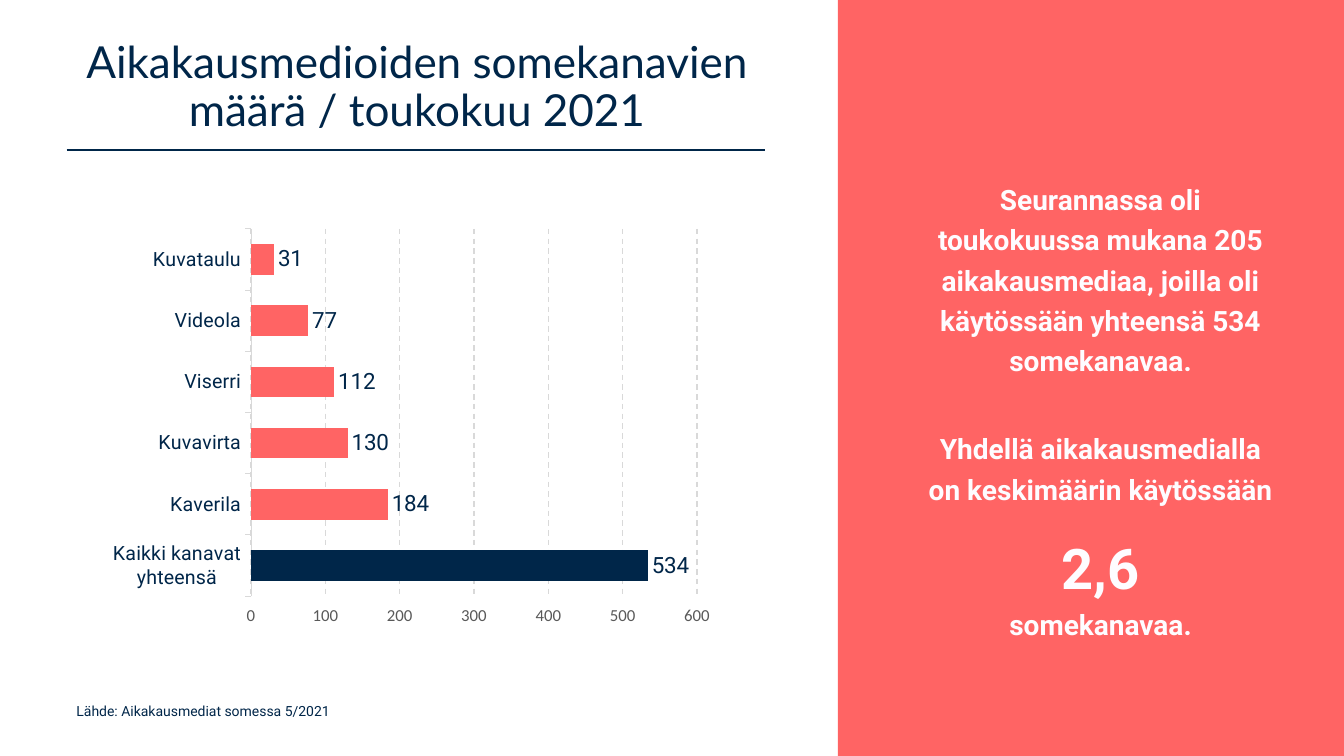
"""Builds a slide with a bar chart of social media channel counts and a summary panel."""
from lxml.etree import SubElement
from pptx import Presentation
from pptx.chart.data import CategoryChartData
from pptx.dml.color import RGBColor
from pptx.enum.chart import XL_CHART_TYPE, XL_LABEL_POSITION, XL_TICK_MARK
from pptx.enum.dml import MSO_LINE
from pptx.enum.shapes import MSO_CONNECTOR, MSO_SHAPE
from pptx.enum.text import MSO_ANCHOR, PP_ALIGN
from pptx.oxml.ns import qn
from pptx.util import Pt

NAVY = RGBColor(0x00, 0x26, 0x49)
CORAL = RGBColor(0xFF, 0x64, 0x64)
PALE = RGBColor(0xFE, 0xFC, 0xFF)
GRID = RGBColor(0xD9, 0xD9, 0xD9)
GREY = RGBColor(0x59, 0x59, 0x59)

TITLE = "Aikakausmedioiden somekanavien määrä / toukokuu 2021"
SOURCE = "Lähde: Aikakausmediat somessa 5/2021"
SUMMARY = [
    ("Seurannassa oli toukokuussa mukana 205 aikakausmediaa, joilla oli "
     "käytössään yhteensä 534 somekanavaa.", 20, 0),
    ("Yhdellä aikakausmedialla on keskimäärin käytössään", 20, 34),
    ("2,6", 40, 10),
    ("somekanavaa.", 20, 0),
]
CHANNELS = {
    "Kaikki kanavat yhteensä": 534,
    "Kaverila": 184,
    "Kuvavirta": 130,
    "Viserri": 112,
    "Videola": 77,
    "Kuvataulu": 31,
}
PLOT = {"x": 0.25, "y": 0.09, "w": 0.57, "h": 0.84}
PAGE_SIZE = (1333, 750)
PANEL = (831, 0, 502, 750)
RULE = (66, 149, 759, 149)
TITLE_BOX = (66, 25, 695, 125)
SOURCE_BOX = (66, 692, 658, 44)
SUMMARY_BOX = (904, 150, 375, 510)
CHART_BOX = (55, 188, 776, 434)
SCALE = 9144


def px(lengths):
    return [length * SCALE for length in lengths]


def style(font, name, size, color, bold=False):
    font.name, font.size, font.bold = name, Pt(size), bold
    font.color.rgb = color


def add_text(page, place, lines, name, color, align=PP_ALIGN.CENTER,
             anchor=MSO_ANCHOR.MIDDLE, spacing=1.0, bold=False):
    frame = page.shapes.add_textbox(*px(place)).text_frame
    frame.word_wrap = True
    frame.vertical_anchor = anchor
    for index, (text, size, before) in enumerate(lines):
        para = frame.add_paragraph() if index else frame.paragraphs[0]
        para.text = text
        para.alignment = align
        para.line_spacing = spacing
        para.space_before = Pt(before)
        style(para.font, name, size, color, bold)


def add_panel(page):
    panel = page.shapes.add_shape(MSO_SHAPE.RECTANGLE, *px(PANEL))
    panel.shadow.inherit = False
    panel.fill.solid()
    panel.fill.fore_color.rgb = CORAL
    panel.line.fill.background()


def add_rule(page):
    rule = page.shapes.add_connector(MSO_CONNECTOR.STRAIGHT, *px(RULE))
    rule.line.color.rgb = NAVY
    rule.line.width = Pt(1)
    SubElement(rule._element.spPr, qn("a:effectLst"))


def fix_plot_area(chart):
    area = chart._chartSpace.chart.plotArea
    layout = area.find(qn("c:layout"))
    if layout is None:
        layout = area.makeelement(qn("c:layout"))
        area.insert(0, layout)
    manual = SubElement(layout, qn("c:manualLayout"))
    settings = {"layoutTarget": "inner", "xMode": "edge", "yMode": "edge", **PLOT}
    for tag, value in settings.items():
        SubElement(manual, qn(f"c:{tag}")).set("val", str(value))


def add_bars(page):
    data = CategoryChartData(number_format="#,##0")
    data.categories = list(CHANNELS)
    data.add_series("Somekanavat", list(CHANNELS.values()))
    chart = page.shapes.add_chart(
        XL_CHART_TYPE.BAR_CLUSTERED, *px(CHART_BOX), data).chart
    chart.has_legend = False
    chart.has_title = False
    chart.font.name, chart.font.size = "Calibri", Pt(10)
    fix_plot_area(chart)

    names = chart.category_axis
    names.major_tick_mark = XL_TICK_MARK.OUTSIDE
    names.format.line.color.rgb = GRID
    names.format.line.width = Pt(0.75)
    style(names.tick_labels.font, "Roboto", 14, NAVY)

    counts = chart.value_axis
    counts.minimum_scale, counts.maximum_scale, counts.major_unit = 0, 600, 100
    counts.major_tick_mark = XL_TICK_MARK.OUTSIDE
    counts.format.line.fill.background()
    grid = counts.major_gridlines.format.line
    grid.color.rgb = GRID
    grid.width = Pt(1)
    grid.dash_style = MSO_LINE.DASH
    style(counts.tick_labels.font, "Calibri", 12, GREY)

    plot = chart.plots[0]
    plot.gap_width = 100
    plot.vary_by_categories = False
    bars = plot.series[0]
    bars.format.fill.solid()
    bars.format.fill.fore_color.rgb = CORAL
    total = bars.points[0].format.fill
    total.solid()
    total.fore_color.rgb = NAVY
    labels = bars.data_labels
    labels.show_value = True
    labels.position = XL_LABEL_POSITION.OUTSIDE_END
    labels.number_format = "#,##0"
    labels.number_format_is_linked = False
    style(labels.font, "Roboto", 16, NAVY)


def main():
    deck = Presentation()
    deck.slide_width, deck.slide_height = px(PAGE_SIZE)
    page = deck.slides.add_slide(deck.slide_layouts[6])
    add_panel(page)
    add_rule(page)
    add_text(page, SOURCE_BOX, [(SOURCE, 10, 0)], "Roboto", NAVY,
             align=PP_ALIGN.LEFT, anchor=MSO_ANCHOR.TOP)
    add_text(page, TITLE_BOX, [(TITLE, 31.5, 0)], "Lato", NAVY, spacing=0.9)
    add_text(page, SUMMARY_BOX, SUMMARY, "Roboto", PALE, spacing=1.2, bold=True)
    add_bars(page)
    deck.save("out.pptx")


if __name__ == "__main__":
    main()
